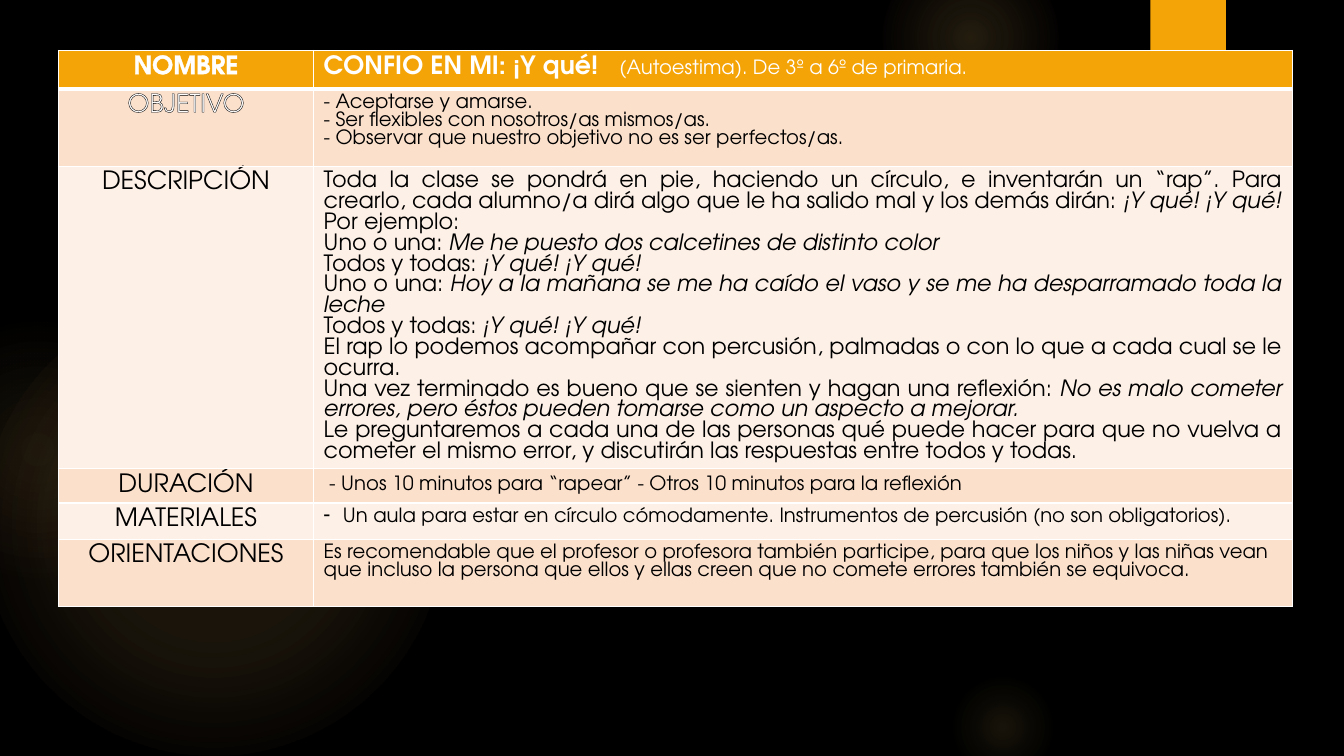
from lxml import etree
from pptx import Presentation
from pptx.dml.color import RGBColor
from pptx.enum.shapes import MSO_SHAPE
from pptx.enum.text import PP_ALIGN
from pptx.oxml import parse_xml
from pptx.util import Inches, Pt

OVAL, RECTANGLE = MSO_SHAPE.OVAL, MSO_SHAPE.RECTANGLE
LEFT, CENTER, JUSTIFY = PP_ALIGN.LEFT, PP_ALIGN.CENTER, PP_ALIGN.JUSTIFY
NS = 'xmlns:a="http://schemas.openxmlformats.org/drawingml/2006/main"'
FONT = "TeX Gyre Adventor"
LINE_RATIO = 0.93
BLACK, WHITE, ORANGE, GLOW = "000000", "FFFFFF", "F5A408", "FAC96A"
PEACH, CREAM = "FBE0CC", "FDF0E7"


def color(hex_code):
    return RGBColor.from_string(hex_code)


def line_xml(tag, hex_code, points):
    return parse_xml(f'<a:{tag} {NS} w="{int(points * 12700)}"><a:solidFill>'
                     f'<a:srgbClr val="{hex_code}"/></a:solidFill></a:{tag}>')


prs = Presentation()
prs.slide_width, prs.slide_height = Inches(13.33), Inches(7.5)
slide = prs.slides.add_slide(prs.slide_layouts[6])
slide.background.fill.solid()
slide.background.fill.fore_color.rgb = color(BLACK)

# Soft glows: left, top, diameter, then (position %, colour, opacity %)
glows = [
    (-0.17, 2.92, 4.58, [(0, GLOW, 11), (36, GLOW, 10), (75, GLOW, 0)]),
    (-0.92, 3.17, 2.58, [(0, GLOW, 8), (36, GLOW, 5), (71, "F59B74", 0)]),
    (9.41, 1.83, 3.08, [(0, GLOW, 7), (36, GLOW, 6), (69, GLOW, 0)]),
    (8.75, -0.5, 1.75, [(0, GLOW, 14), (36, GLOW, 7), (73, GLOW, 0)]),
    (9.41, 6.67, 1.08, [(0, GLOW, 10), (31, GLOW, 5), (66, GLOW, 0)]),
]
for left, top, diameter, stops in glows:
    glow = slide.shapes.add_shape(OVAL, Inches(left), Inches(top),
                                  Inches(diameter), Inches(diameter))
    glow.shadow.inherit = False
    glow.line.fill.background()
    stop_xml = "".join(
        f'<a:gs pos="{position * 1000}"><a:srgbClr val="{tint}">'
        f'<a:alpha val="{opacity * 1000}"/></a:srgbClr></a:gs>'
        for position, tint, opacity in stops)
    gradient = parse_xml(
        f'<a:gradFill {NS} rotWithShape="1"><a:gsLst>{stop_xml}</a:gsLst>'
        '<a:path path="circle"><a:fillToRect l="50000" t="50000" r="50000" b="50000"/>'
        '</a:path></a:gradFill>')
    glow.element.spPr.prstGeom.addnext(gradient)

# Orange tab
tab = slide.shapes.add_shape(RECTANGLE, Inches(11.41), 0, Inches(0.75), Inches(1.25))
tab.shadow.inherit = False
tab.fill.solid()
tab.fill.fore_color.rgb = color(ORANGE)
tab.line.fill.background()

# Activity sheet: label, row height, text size, alignment, paragraphs.
# "|" switches to the accent style (italic; small and regular in the heading) and back.
CHORUS = "Todos y todas: |¡Y qué! ¡Y qué!"
activity = [
    ("NOMBRE", 0.38, 18, LEFT,
     ["CONFIO EN MI: ¡Y qué!   |(Autoestima). De 3º a 6º de primaria."]),
    ("OBJETIVO", 0.77, 14, LEFT,
     ["- Aceptarse y amarse.",
      "- Ser flexibles con nosotros/as mismos/as.",
      "- Observar que nuestro objetivo no es ser perfectos/as."]),
    ("DESCRIPCIÓN", 3.0, 16, JUSTIFY,
     ["Toda la clase se pondrá en pie, haciendo un círculo, e inventarán un “rap”. "
      "Para crearlo, cada alumno/a dirá algo que le ha salido mal y los demás dirán: "
      "|¡Y qué! ¡Y qué!",
      "Por ejemplo:",
      "Uno o una: |Me he puesto dos calcetines de distinto color",
      CHORUS,
      "Uno o una: |Hoy a la mañana se me ha caído el vaso y se me ha desparramado "
      "toda la leche",
      CHORUS,
      "El rap lo podemos acompañar con percusión, palmadas o con lo que a cada cual "
      "se le ocurra.",
      "Una vez terminado es bueno que se sienten y hagan una reflexión: |No es malo "
      "cometer errores, pero éstos pueden tomarse como un aspecto a mejorar.",
      "Le preguntaremos a cada una de las personas qué puede hacer para que no vuelva "
      "a cometer el mismo error, y discutirán las respuestas entre todos y todas."]),
    ("DURACIÓN", 0.34, 14, LEFT,
     [" - Unos 10 minutos para “rapear” - Otros 10 minutos para la reflexión"]),
    ("MATERIALES", 0.36, 14, JUSTIFY,
     ["Un aula para estar en círculo cómodamente. Instrumentos de percusión "
      "(no son obligatorios)."]),
    ("ORIENTACIONES", 0.67, 14, LEFT,
     ["Es recomendable que el profesor o profesora también participe, para que los "
      "niños y las niñas vean que incluso la persona que ellos y ellas creen que no "
      "comete errores también se equivoca."]),
]
column_widths = [2.53, 9.71]
sheet = slide.shapes.add_table(
    len(activity), 2, Inches(0.58), Inches(0.5), Inches(sum(column_widths)),
    Inches(sum(entry[1] for entry in activity))).table
for column, width in zip(sheet.columns, column_widths):
    column.width = Inches(width)

for row, (label, height, size, alignment, paragraphs) in enumerate(activity):
    sheet.rows[row].height = Inches(height)
    heading = row == 0
    band = ORANGE if heading else PEACH if row % 2 else CREAM
    contents = [([label], 18, CENTER), (paragraphs, size, alignment)]
    for column, (texts, text_size, text_alignment) in enumerate(contents):
        cell = sheet.cell(row, column)
        cell.fill.solid()
        cell.fill.fore_color.rgb = color(band)

        # White cell borders, thicker under the heading
        for position, side in enumerate(("lnL", "lnR", "lnT", "lnB")):
            thick = (heading and side == "lnB") or (row == 1 and side == "lnT")
            cell._tc.get_or_add_tcPr().insert(
                position, line_xml(side, WHITE, 3 if thick else 1))

        frame = cell.text_frame
        for number, text in enumerate(texts):
            paragraph = frame.add_paragraph() if number else frame.paragraphs[0]
            paragraph.alignment = text_alignment
            paragraph.line_spacing = Pt(
                LINE_RATIO * (16 if label == "DURACIÓN" and column else text_size))
            paragraph.font.name = FONT
            for part, words in enumerate(text.split("|")):
                run = paragraph.add_run()
                run.text = words
                font = run.font
                accent = part == 1
                font.name = FONT
                font.size = Pt(14 if heading and accent else text_size)
                font.bold = heading and not accent
                font.italic = accent and not heading
                white_text = heading or label == "OBJETIVO" and column == 0
                font.color.rgb = color(WHITE if white_text else BLACK)
                if column == 0:
                    outline = line_xml("ln", WHITE if heading else BLACK, 0.75)
                    run._r.get_or_add_rPr().insert(0, outline)

# Hanging dash for the materials
materials = sheet.cell(4, 1).text_frame.paragraphs[0]._p.get_or_add_pPr()
materials.set("marL", str(Inches(0.19)))
materials.set("indent", str(-Inches(0.19)))
dash = parse_xml(f'<a:buChar {NS} char="-"/>')
materials.find(etree.QName(dash.nsmap["a"], "lnSpc").text).addnext(dash)

prs.save("out.pptx")
